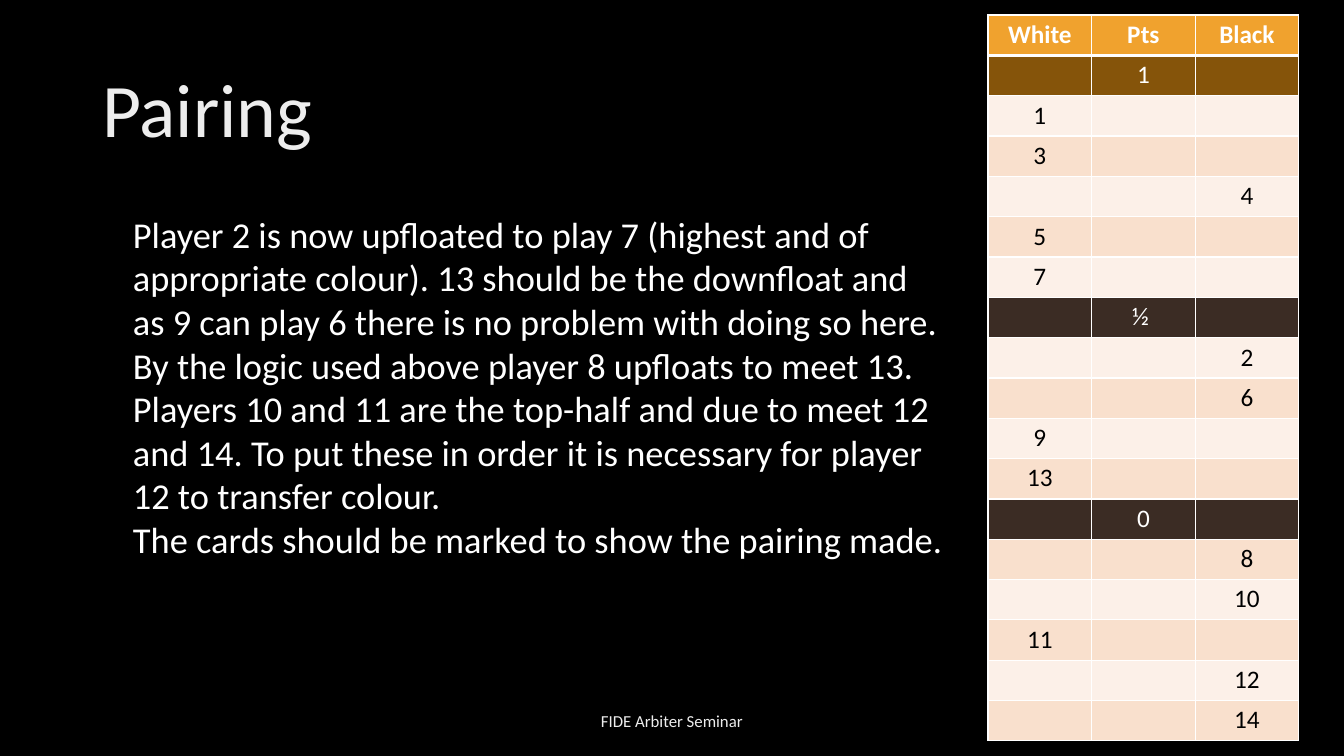
import pptx
import pptx.util
import pptx.dml.color
import pptx.enum.text
import pptx.oxml.ns
import lxml.etree

Cm = pptx.util.Cm
Pt = pptx.util.Pt
ANCHOR = pptx.enum.text.MSO_ANCHOR
ALIGN = pptx.enum.text.PP_ALIGN
COLOURS = {
    "background": "000000",
    "white": "FFFFFF",
    "black": "000000",
    "title": "EDEDED",
    "header": "F0A22E",
    "top_score": "85540A",
    "score": "3B2C24",
    "light": "FCF0E8",
    "dark": "F9E0CD",
}


def colour(name):
    return pptx.dml.color.RGBColor.from_string(COLOURS[name])


def write(text, frame, size, color="white", bold=False, align=ALIGN.LEFT,
          anchor=ANCHOR.TOP, spacing=1.0):
    frame.word_wrap = True
    frame.vertical_anchor = anchor
    for index, line in enumerate(text.split("\n")):
        paragraph = frame.paragraphs[0] if index == 0 else frame.add_paragraph()
        paragraph.alignment = align
        paragraph.line_spacing = spacing
        run = paragraph.add_run()
        run.text = line
        run.font.name = "Calibri"
        run.font.size = Pt(size)
        run.font.bold = bold
        run.font.color.rgb = colour(color)


presentation = pptx.Presentation()
presentation.slide_width = Cm(33.87)
presentation.slide_height = Cm(19.05)
slide = presentation.slides.add_slide(presentation.slide_layouts[6])
slide.background.fill.solid()
slide.background.fill.fore_color.rgb = colour("background")

title = slide.shapes.add_textbox(Cm(2.33), Cm(1.01), Cm(29.21), Cm(3.68))
write("Pairing", title.text_frame, 54, color="title", anchor=ANCHOR.MIDDLE, spacing=0.9)

footer = slide.shapes.add_textbox(Cm(11.22), Cm(17.66), Cm(11.43), Cm(1.01))
write("FIDE Arbiter Seminar", footer.text_frame, 12, color="title",
      align=ALIGN.CENTER, anchor=ANCHOR.MIDDLE)

explanation = slide.shapes.add_textbox(Cm(3.1), Cm(5.21), Cm(21.39), Cm(9.14))
write(
    "Player 2 is now upfloated to play 7 (highest and of appropriate colour). "
    "13 should be the downfloat and\n"
    "as 9 can play 6 there is no problem with doing so here.\n"
    "By the logic used above player 8 upfloats to meet 13. Players 10 and 11 are "
    "the top-half and due to meet 12 and 14. To put these in order it is necessary "
    "for player 12 to transfer colour.\n"
    "The cards should be marked to show the pairing made.",
    explanation.text_frame, 26)

pairings = [
    ("White", "Pts", "Black"),
    ("", "1", ""),
    ("1", "", ""),
    ("3", "", ""),
    ("", "", "4"),
    ("5", "", ""),
    ("7", "", ""),
    ("", "½ ", ""),
    ("", "", "2"),
    ("", "", "6"),
    ("9", "", ""),
    ("13", "", ""),
    ("", "0", ""),
    ("", "", "8"),
    ("", "", "10"),
    ("11", "", ""),
    ("", "", "12"),
    ("", "", "14"),
]
special_fills = {0: "header", 1: "top_score", 7: "score", 12: "score"}

table = slide.shapes.add_table(len(pairings), 3, Cm(24.9), Cm(0.38), Cm(7.83), Cm(18.29)).table
table.horz_banding = False
for column in table.columns:
    column.width = Cm(2.61)

for row_index, values in enumerate(pairings):
    table.rows[row_index].height = Cm(18.29 / len(pairings))
    fill = special_fills.get(row_index, ("light", "dark")[row_index % 2])
    for column_index, value in enumerate(values):
        cell = table.cell(row_index, column_index)
        cell.margin_top = cell.margin_bottom = Cm(0.11)
        properties = cell._tc.get_or_add_tcPr()
        for side in ("lnL", "lnR", "lnT", "lnB"):
            thick = (row_index == 0 and side == "lnB") or (row_index == 1 and side == "lnT")
            border = lxml.etree.SubElement(properties, pptx.oxml.ns.qn("a:" + side),
                                           w=str(Pt(3 if thick else 1)))
            solid = lxml.etree.SubElement(border, pptx.oxml.ns.qn("a:solidFill"))
            lxml.etree.SubElement(solid, pptx.oxml.ns.qn("a:srgbClr"), val=COLOURS["white"])
        cell.fill.solid()
        cell.fill.fore_color.rgb = colour(fill)
        if value:
            write(value, cell.text_frame, 18, bold=row_index == 0, align=ALIGN.CENTER,
                  color="white" if row_index in special_fills else "black")

presentation.save("out.pptx")
